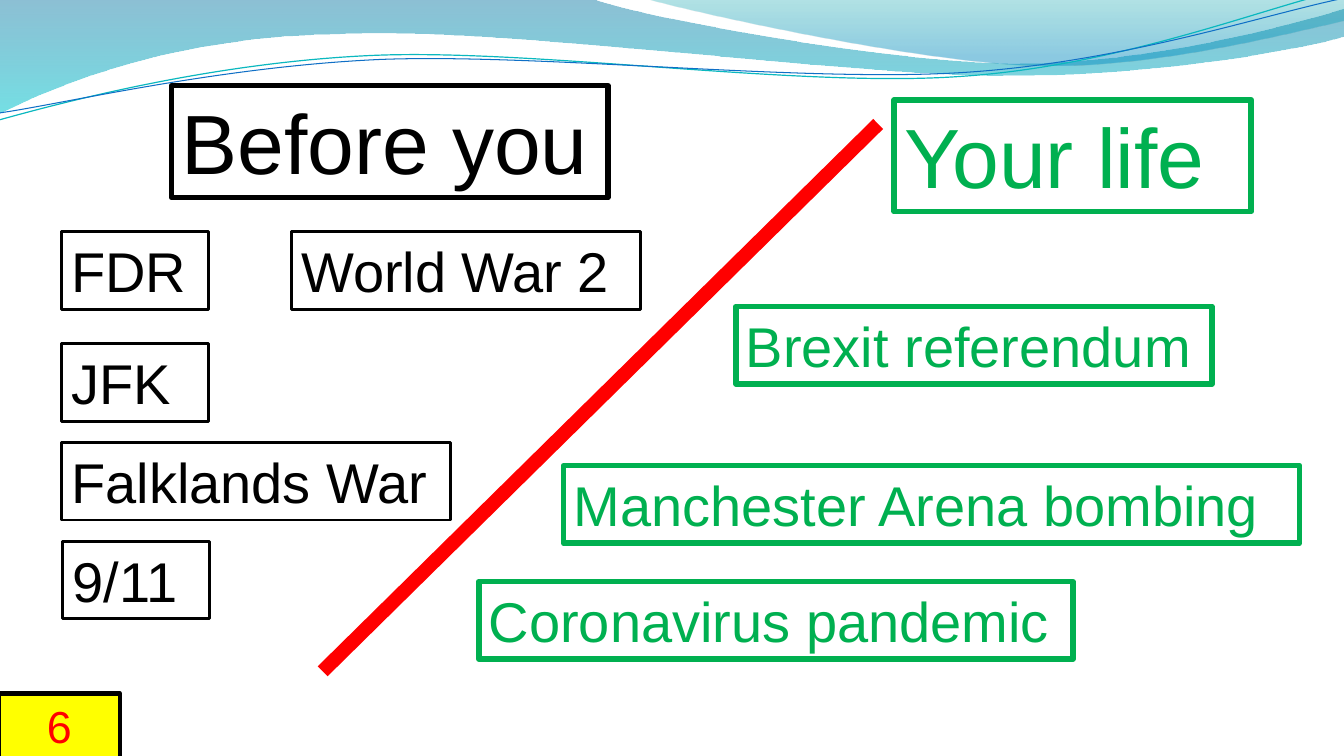
from lxml import etree
from pptx import Presentation
from pptx.dml.color import RGBColor
from pptx.enum.shapes import MSO_CONNECTOR
from pptx.enum.text import MSO_ANCHOR, MSO_AUTO_SIZE, PP_ALIGN
from pptx.oxml.ns import qn
from pptx.util import Pt

EMU_PER_PX = 9144
TITLE_ONLY = 5
STRAIGHT = MSO_CONNECTOR.STRAIGHT
TOP = MSO_ANCHOR.TOP
FIT_SHAPE = MSO_AUTO_SIZE.SHAPE_TO_FIT_TEXT
LEFT, CENTER = PP_ALIGN.LEFT, PP_ALIGN.CENTER

BLACK, GREEN, RED, YELLOW = "000000", "00B050", "FF0000", "FFFF00"

BACK_WAVE = [
    [(587, -1)],
    [(634, 17), (885, 63), (1011, 63)],
    [(1138, 63), (1278, 26), (1333, 9)],
    [(1335, 36)],
    [(1311, 44), (1160, 76), (994, 75)],
    [(829, 75), (509, 28), (343, 34)],
    [(172, 36), (61, 83), (-1, 113)],
    [(0, 0)],
]
FRONT_WAVE = [
    [(679, 11), (909, 62), (1025, 65)],
    [(1141, 69), (1282, 32), (1333, 21)],
    [(1333, 0)],
    [(639, -1)],
]
TEAL_STRAND = [
    [(64, 101), (211, 62), (369, 55)],
    [(527, 48), (790, 87), (950, 76)],
    [(1110, 66), (1252, 8), (1331, -10)],
]
BLUE_STRAND = [
    [(63, 103), (218, 66), (378, 59)],
    [(537, 53), (796, 82), (955, 72)],
    [(1115, 62), (1255, 14), (1334, -2)],
]
BEFORE_EVENTS = [
    ("World War 2", 289, 230, 346),
    ("JFK", 61, 341, 146),
    ("9/11", 62, 537, 146),
    ("FDR", 61, 230, 146),
    ("Falklands War", 61, 439, 386),
]
LIFE_EVENTS = [
    ("Brexit referendum", 730, 304, 472),
    ("Manchester Arena bombing", 559, 462, 730),
    ("Coronavirus pandemic", 475, 577, 589),
]


def px(length):
    return round(length * EMU_PER_PX)


def color(hex_string):
    return RGBColor.from_string(hex_string)


class SlideBuilder:
    """Draws styled elements on the current slide, measured in px."""

    font = "Arial"

    def __init__(self, presentation):
        self.slide = presentation.slides.add_slide(presentation.slide_layouts[TITLE_ONLY])
        self.shapes = self.slide.shapes

    def outline(self, shape, line_color, width):
        shape.line.color.rgb = color(line_color)
        shape.line.width = Pt(width)

    def curve(self, start, segments, close):
        builder = self.shapes.build_freeform(px(start[0]), px(start[1]), scale=1.0)
        points = [(px(x), px(y)) for segment in segments for x, y in segment]
        builder.add_line_segments(points, close=close)
        shape = builder.convert_to_shape()
        shape.shadow.inherit = False
        nodes = iter(shape.element.xpath(".//a:path/a:lnTo"))
        for segment in segments:
            group = [next(nodes) for _ in segment]
            if len(group) == 3:
                bezier = etree.Element(qn("a:cubicBezTo"))
                group[0].addprevious(bezier)
                for node in group:
                    bezier.append(node[0])
                    node.getparent().remove(node)
        return shape

    def wave(self, start, segments, stops):
        shape = self.curve(start, segments, True)
        shape.line.fill.background()
        shape.fill.gradient()
        shape.fill.gradient_angle = 270
        for stop, (position, stop_color, _) in zip(shape.fill.gradient_stops, stops):
            stop.position = position
            stop.color.rgb = color(stop_color)
        for node, (_, _, opacity) in zip(shape.element.xpath(".//a:gs/a:srgbClr"), stops):
            etree.SubElement(node, qn("a:alpha"), val=str(opacity * 1000))

    def strand(self, start, segments, line_color, width):
        shape = self.curve(start, segments, False)
        shape.fill.background()
        self.outline(shape, line_color, width)

    def divider(self, start, end, line_color, width):
        connector = self.shapes.add_connector(STRAIGHT, *map(px, (*start, *end)))
        self.outline(connector, line_color, width)
        etree.SubElement(connector.element.spPr, qn("a:effectLst"))

    def frame(self, shape, text, box, size, text_color, line_color, width, align=LEFT):
        shape.left, shape.top, shape.width, shape.height = map(px, box)
        self.outline(shape, line_color, width)
        text_frame = shape.text_frame
        text_frame.text = text
        text_frame.word_wrap = True
        text_frame.auto_size = FIT_SHAPE
        text_frame.vertical_anchor = TOP
        paragraph = text_frame.paragraphs[0]
        paragraph.alignment = align
        font = paragraph.runs[0].font
        font.name = self.font
        font.size = Pt(size)
        font.color.rgb = color(text_color)

    def title(self, text, box, text_color):
        self.frame(self.shapes.title, text, box, 60, text_color, text_color, 4)

    def label(self, text, box, size, text_color, width, line_color=None, fill=None, align=LEFT):
        shape = self.shapes.add_textbox(*map(px, box))
        if fill:
            shape.fill.solid()
            shape.fill.fore_color.rgb = color(fill)
        self.frame(shape, text, box, size, text_color, line_color or text_color, width, align)


def main():
    presentation = Presentation()
    presentation.slide_width = px(1333)
    presentation.slide_height = px(750)
    builder = SlideBuilder(presentation)

    builder.wave((0, 0), BACK_WAVE, [(0, "0074A1", 45), (1, "00C6CF", 55)])
    builder.wave((639, -1), FRONT_WAVE, [(0, "00A1A9", 30), (0.8, "008BBF", 45)])
    builder.strand((-1, 119), TEAL_STRAND, "0AB8BF", 0.85)
    builder.strand((0, 112), BLUE_STRAND, "0F6FC6", 0.75)
    builder.divider((871, 123), (320, 666), RED, 10)

    builder.title("Before you", (170, 85, 433, 111), BLACK)
    builder.label("Your life", (887, 99, 354, 111), 60, GREEN, 4)
    for events, text_color, width in ((BEFORE_EVENTS, BLACK, 2), (LIFE_EVENTS, GREEN, 4)):
        for text, left, top, box_width in events:
            builder.label(text, (left, top, box_width, 77), 40, text_color, width)
    builder.label("6", (-1, 688, 120, 64), 32, RED, 3, BLACK, YELLOW, CENTER)

    presentation.save("out.pptx")


if __name__ == "__main__":
    main()
